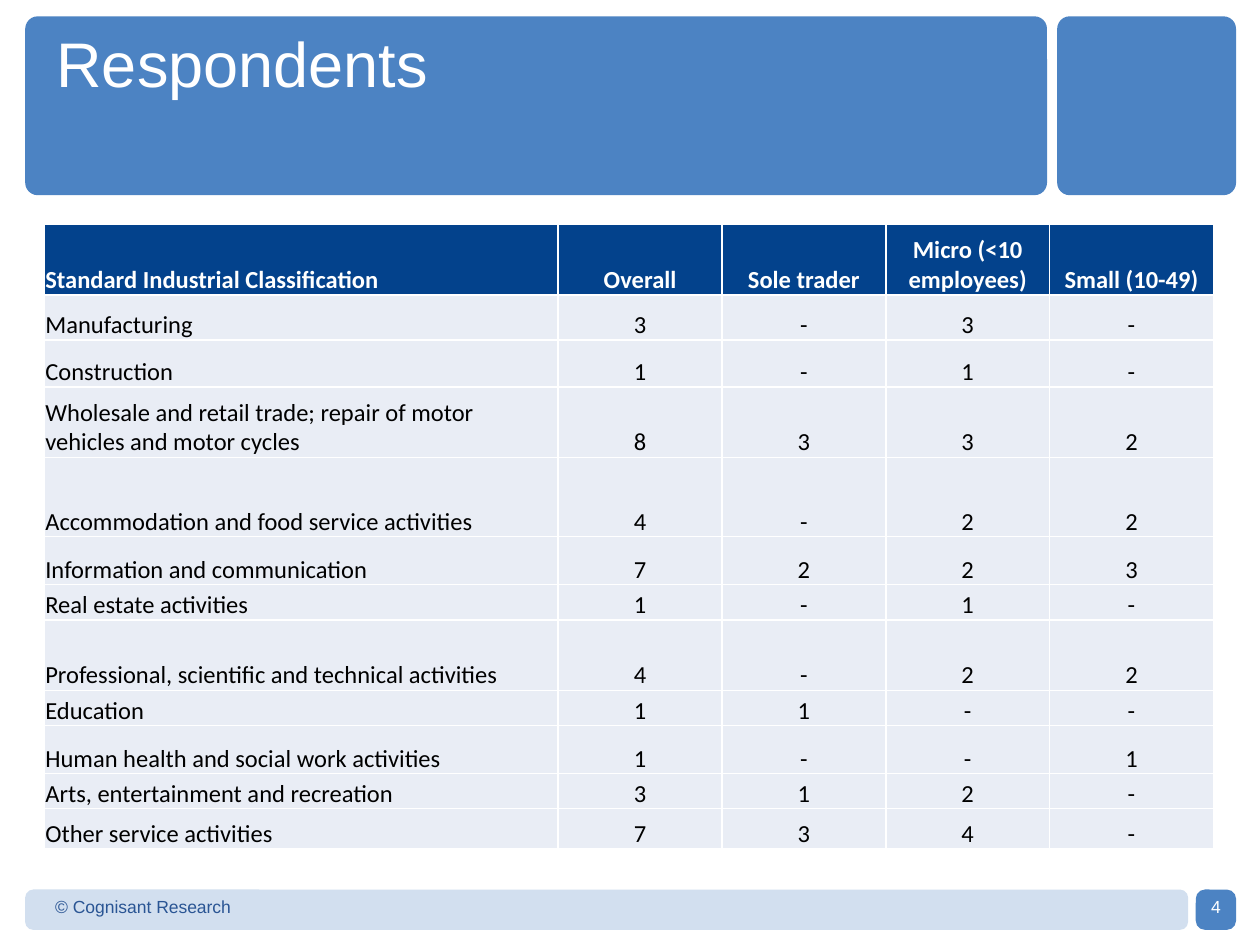
"""Build the slide that lists respondents by industry and firm size."""
from lxml.etree import SubElement
from pptx import Presentation
from pptx.dml.color import RGBColor
from pptx.enum.shapes import MSO_SHAPE
from pptx.enum.text import MSO_ANCHOR, PP_ALIGN
from pptx.oxml import parse_xml
from pptx.oxml.ns import qn
from pptx.util import Inches, Pt

WIDE, HIGH = Inches(10), Inches(7.5)
BLUE = RGBColor(0x4C, 0x83, 0xC3)
NAVY = RGBColor(0x03, 0x42, 0x8C)
INK = RGBColor(0x2A, 0x55, 0x94)
PALE = RGBColor(0xE9, 0xED, 0xF5)
WHITE = RGBColor(0xFF, 0xFF, 0xFF)
BLACK = RGBColor(0, 0, 0)

TOP, BAND = 1.73, 18.93
FOOT, STRIP = 94.13, 4.27
COLS = [40.8] + [13] * 4
ROWS = [
    (7.47, "Standard Industrial Classification", "Overall", "Sole trader",
     "Micro (<10 employees)", "Small (10-49)"),
    (4.8, "Manufacturing", "3", "-", "3", "-"),
    (4.93, "Construction", "1", "-", "1", "-"),
    (7.47, "Wholesale and retail trade; repair of motor vehicles and motor cycles",
     "8", "3", "3", "2"),
    (8.4, "Accommodation and food service activities", "4", "-", "2", "2"),
    (5.07, "Information and communication", "7", "2", "2", "3"),
    (3.73, "Real estate activities", "1", "-", "1", "-"),
    (7.47, "Professional, scientific and technical activities", "4", "-", "2", "2"),
    (3.73, "Education", "1", "1", "-", "-"),
    (5.07, "Human health and social work activities", "1", "-", "-", "1"),
    (3.73, "Arts, entertainment and recreation", "3", "1", "2", "-"),
    (4.27, "Other service activities", "7", "3", "4", "-"),
]


def across(share):
    """Turn a percentage of the slide's width into a length."""
    return int(WIDE * share / 100)


def down(share):
    """Turn a percentage of the slide's height into a length."""
    return int(HIGH * share / 100)


def place(left, top, width, height):
    """Turn four percentages into a position and a size."""
    return across(left), down(top), across(width), down(height)


def style(para, size, color, font="Arial", bold=False, align=PP_ALIGN.LEFT):
    """Set the alignment of a paragraph and the font of its runs."""
    para.alignment = align
    for run in para.runs:
        run.font.name = font
        run.font.size = Pt(size)
        run.font.bold = bold
        run.font.color.rgb = color


def add_panel(slide, box, curve, alpha=None):
    """Add a rounded blue panel, see-through when alpha is given."""
    panel = slide.shapes.add_shape(MSO_SHAPE.ROUNDED_RECTANGLE, *place(*box))
    panel.adjustments[0] = curve
    panel.shadow.inherit = False
    panel.line.fill.background()
    panel.fill.solid()
    panel.fill.fore_color.rgb = BLUE
    if alpha:
        tint = panel.element.spPr.find(qn("a:solidFill"))[0]
        SubElement(tint, qn("a:alpha")).set("val", str(alpha * 1000))


def add_label(slide, box, text, size, color, align=PP_ALIGN.LEFT):
    """Add a wrapped text box and return its paragraph."""
    frame = slide.shapes.add_textbox(*place(*box)).text_frame
    frame.word_wrap = True
    frame.text = text
    para = frame.paragraphs[0]
    style(para, size, color, align=align)
    return para


def add_edges(cell):
    """Draw thin white lines on all four sides of a cell."""
    props = cell._tc.get_or_add_tcPr()
    for spot, side in enumerate(("lnL", "lnR", "lnT", "lnB")):
        props.insert(spot, parse_xml(
            f'<a:{side} xmlns:a="http://schemas.openxmlformats.org/drawingml/2006/main"'
            f' w="{Pt(1)}"><a:solidFill><a:srgbClr val="{WHITE}"/></a:solidFill></a:{side}>'))


def fill_cell(cell, text, head, first):
    """Write and format one cell of the table."""
    cell.text = text
    cell.vertical_anchor = MSO_ANCHOR.BOTTOM
    cell.margin_left = cell.margin_right = cell.margin_top = Inches(0.01)
    cell.margin_bottom = 0
    cell.fill.solid()
    cell.fill.fore_color.rgb = NAVY if head else PALE
    style(cell.text_frame.paragraphs[0], 14, WHITE if head else BLACK, "Calibri",
          head, PP_ALIGN.LEFT if first else PP_ALIGN.CENTER)
    add_edges(cell)


def add_grid(slide, left, top):
    """Add the table of respondents."""
    box = place(left, top, sum(COLS), sum(row[0] for row in ROWS))
    table = slide.shapes.add_table(len(ROWS), len(COLS), *box).table
    table.horz_banding = False
    for col, width in zip(table.columns, COLS):
        col.width = across(width)
    for i, (height, *texts) in enumerate(ROWS):
        table.rows[i].height = down(height)
        for j, text in enumerate(texts):
            fill_cell(table.cell(i, j), text, i == 0, j == 0)


def main():
    """Build and save the slide."""
    deck = Presentation()
    deck.slide_width, deck.slide_height = WIDE, HIGH
    slide = deck.slides.add_slide(deck.slide_layouts[6])
    add_panel(slide, (2, TOP, 81.1, BAND), 0.07)
    add_panel(slide, (83.9, TOP, 14.2, BAND), 0.07)
    add_panel(slide, (94.9, FOOT, 3.2, STRIP), 0.23)
    add_panel(slide, (2, FOOT, 92.3, STRIP), 0.2, alpha=25)
    title = add_label(slide, (3.5, 2.8, 78.8, 17.87), "Respondents", 36, WHITE)
    title.line_spacing = 0.9
    add_label(slide, (3.4, FOOT, 31.7, 4.4), "© Cognisant Research", 10, INK)
    add_label(slide, (94.9, FOOT, 3.2, 4.4), "4", 10, WHITE, PP_ALIGN.CENTER)
    add_grid(slide, 3.5, 23.73)
    deck.save("out.pptx")


if __name__ == "__main__":
    main()
